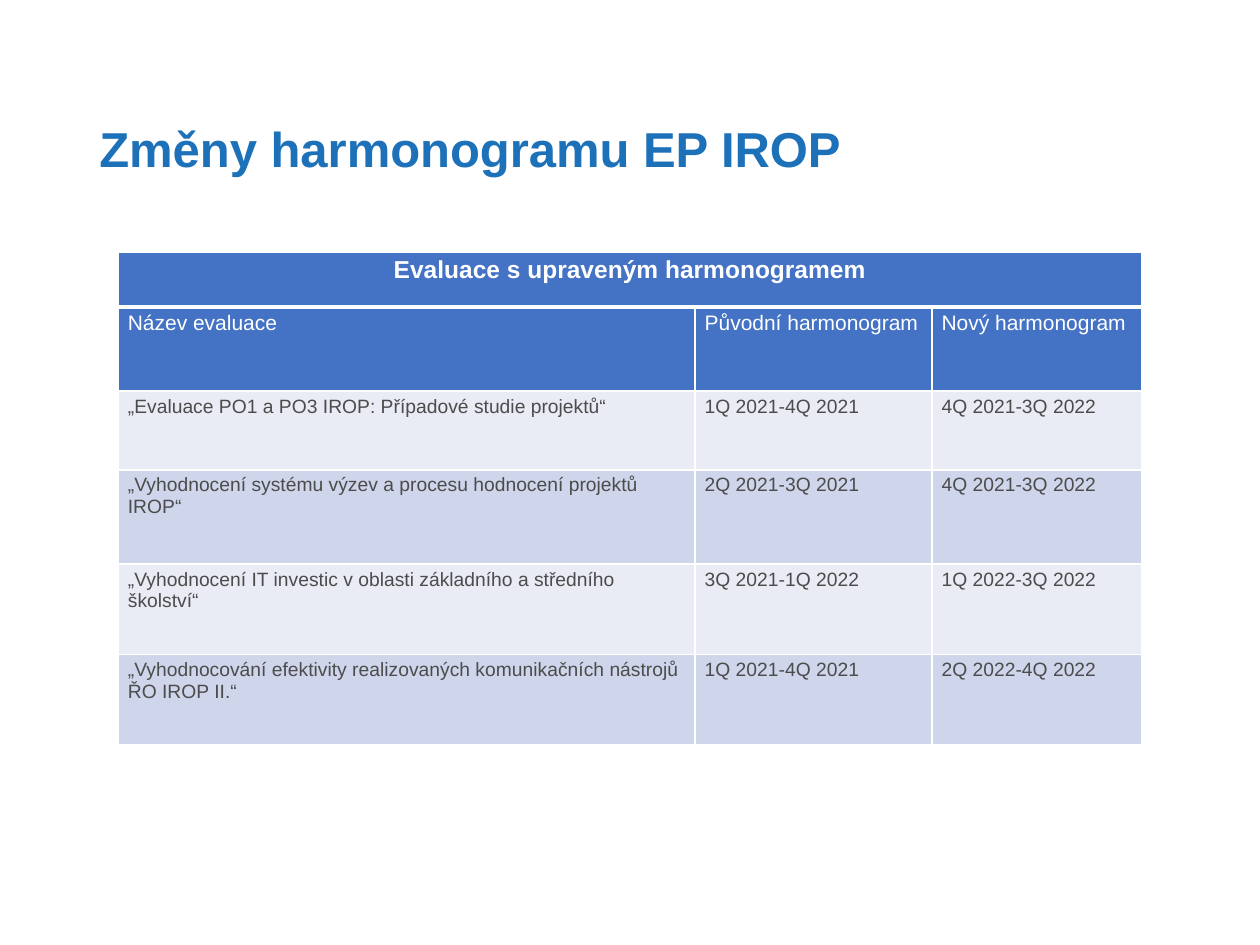
from lxml.etree import SubElement
from pptx import Presentation
from pptx.dml.color import RGBColor
from pptx.enum.text import MSO_ANCHOR, PP_ALIGN
from pptx.oxml.ns import qn
from pptx.util import Pt

BLUE = RGBColor(0x1D, 0x71, 0xB8)
HEAD = RGBColor(0x44, 0x72, 0xC4)
LIGHT = RGBColor(0xE9, 0xEB, 0xF5)
DARK = RGBColor(0xCF, 0xD5, 0xEA)
GREY = RGBColor(0x4C, 0x4C, 0x4C)
WHITE = RGBColor(0xFF, 0xFF, 0xFF)

TITLE = "Změny harmonogramu EP IROP"
BANNER = "Evaluace s upraveným harmonogramem"
ROWS = [
    ("Název evaluace", "Původní harmonogram", "Nový harmonogram"),
    ("„Evaluace PO1 a PO3 IROP: Případové studie projektů“",
     "1Q 2021-4Q 2021", "4Q 2021-3Q 2022"),
    ("„Vyhodnocení systému výzev a procesu hodnocení projektů IROP“",
     "2Q 2021-3Q 2021", "4Q 2021-3Q 2022"),
    ("„Vyhodnocení IT investic v oblasti základního a středního školství“",
     "3Q 2021-1Q 2022", "1Q 2022-3Q 2022"),
    ("„Vyhodnocování efektivity realizovaných komunikačních nástrojů ŘO IROP II.“",
     "1Q 2021-4Q 2021", "2Q 2022-4Q 2022"),
]
WIDTHS = (329.6, 135.4, 119.6)
HEIGHTS = (31.5, 48, 45, 53.8, 51.8, 51.4)


def write(frame, text, size=11, color=GREY, bold=False,
          align=PP_ALIGN.LEFT, spacing=1.0):
    par = frame.paragraphs[0]
    par.alignment = align
    par.line_spacing = spacing
    run = par.add_run()
    run.text = text
    font = run.font
    font.name, font.size, font.bold = "Arial", Pt(size), bold
    font.color.rgb = color


def style(cell, fill, top=1, bottom=1):
    # White borders come before the fill in the cell properties
    props = cell._tc.get_or_add_tcPr()
    for side, width in (("L", 1), ("R", 1), ("T", top), ("B", bottom)):
        line = SubElement(props, qn("a:ln" + side), w=str(Pt(width)))
        paint = SubElement(line, qn("a:solidFill"))
        SubElement(paint, qn("a:srgbClr"), val=str(WHITE))
    cell.fill.solid()
    cell.fill.fore_color.rgb = fill
    cell.margin_left = cell.margin_right = Pt(5.4)
    cell.margin_top = cell.margin_bottom = Pt(2.7)


def add_title(slide, left, top, width, height):
    box = slide.shapes.add_textbox(Pt(left), Pt(top), Pt(width), Pt(height))
    frame = box.text_frame
    frame.word_wrap = True
    frame.vertical_anchor = MSO_ANCHOR.MIDDLE
    write(frame, TITLE, size=28, color=BLUE, bold=True, spacing=0.9)


def add_plan(slide, left, top):
    table = slide.shapes.add_table(
        len(HEIGHTS), len(WIDTHS), Pt(left), Pt(top),
        Pt(sum(WIDTHS)), Pt(sum(HEIGHTS))).table
    for col, width in zip(table.columns, WIDTHS):
        col.width = Pt(width)
    for row, height in zip(table.rows, HEIGHTS):
        row.height = Pt(height)

    # Banner across all columns
    for cell in table.rows[0].cells:
        style(cell, HEAD, bottom=3)
    first = table.cell(0, 0)
    first.merge(table.cell(0, len(WIDTHS) - 1))
    write(first.text_frame, BANNER, size=14, color=WHITE, bold=True,
          align=PP_ALIGN.CENTER)

    # Column heads, then banded rows
    for i, texts in enumerate(ROWS, 1):
        head = i == 1
        fill = HEAD if head else (DARK if i % 2 else LIGHT)
        for j, text in enumerate(texts):
            cell = table.cell(i, j)
            style(cell, fill, top=3 if head else 1)
            write(cell.text_frame, text, size=12 if head else 11,
                  color=WHITE if head else GREY)


def main():
    deck = Presentation()
    deck.slide_width, deck.slide_height = Pt(720), Pt(540)
    slide = deck.slides.add_slide(deck.slide_layouts[6])
    add_title(slide, 49.7, 28.8, 619.2, 115.2)
    add_plan(slide, 67.7, 144)
    deck.save("out.pptx")


if __name__ == "__main__":
    main()
